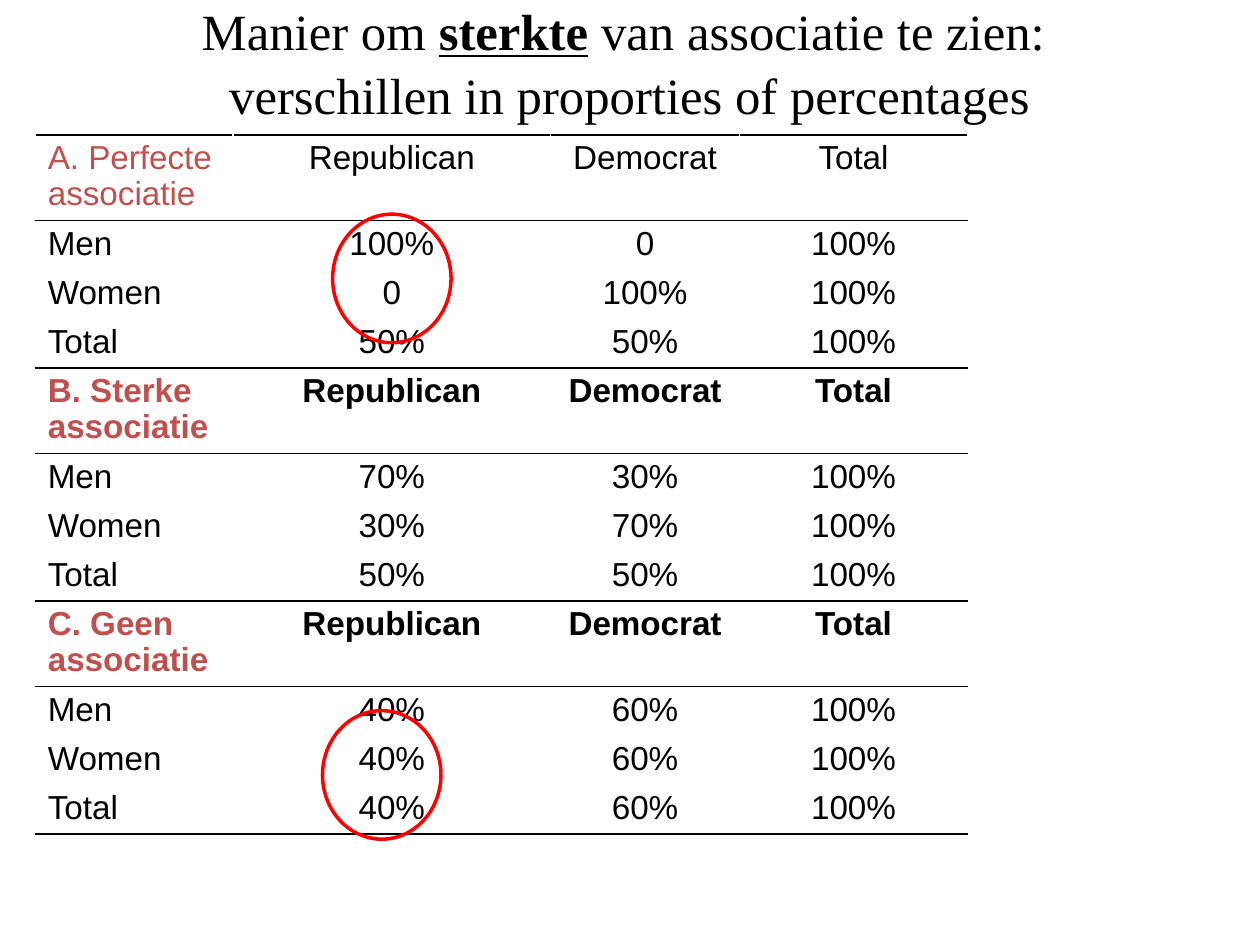
from copy import deepcopy

from lxml.etree import SubElement
from pptx import Presentation
from pptx.dml.color import RGBColor
from pptx.enum.shapes import MSO_SHAPE as Shape
from pptx.enum.text import MSO_ANCHOR as Anchor, MSO_AUTO_SIZE as AutoSize, PP_ALIGN as Align
from pptx.oxml.ns import qn
from pptx.util import Inches, Pt

COLORS = {"text": "000000", "heading": "C0504D", "white": "FFFFFF", "ring": "FF0000"}
TITLE_LINES = [
    [("Manier om ", False), ("sterkte", True), (" van associatie te zien: ", False)],
    [("verschillen in proporties of percentages", False)],
]
PARTIES = ["Republican", "Democrat", "Total"]
SECTIONS = [
    ("A. Perfecte associatie", False, [
        ("Men", "100%", "0", "100%"),
        ("Women", "0", "100%", "100%"),
        ("Total", "50%", "50%", "100%"),
    ]),
    ("B. Sterke associatie", True, [
        ("Men", "70%", "30%", "100%"),
        ("Women", "30%", "70%", "100%"),
        ("Total", "50%", "50%", "100%"),
    ]),
    ("C. Geen associatie", True, [
        ("Men", "40%", "60%", "100%"),
        ("Women", "40%", "60%", "100%"),
        ("Total", "40%", "60%", "100%"),
    ]),
]
COLUMN_WIDTHS = [1.57, 2.52, 1.5, 1.81]
HEADER_HEIGHT, ROW_HEIGHT = 0.68, 0.39
RING_SIZE = (0.94, 1.02)
RING_CORNERS = [(2.64, 1.7), (2.56, 5.64)]


def add_span(para, text, font_name, size, color, bold=False, underline=False):
    span = para.add_run()
    span.text = text
    font = span.font
    font.name, font.size = font_name, Pt(size)
    font.bold, font.underline = bold, underline
    font.color.rgb = RGBColor.from_string(COLORS[color])
    return span


def add_title(page):
    title = page.shapes.title
    title.left, title.top = Inches(0.5), Inches(-0.03)
    title.width, title.height = Inches(9), Inches(1.02)
    frame = title.text_frame
    frame.word_wrap = True
    frame.auto_size = AutoSize.NONE
    frame.vertical_anchor = Anchor.MIDDLE
    para = frame.paragraphs[0]
    para.alignment = Align.CENTER
    para.line_spacing = 1.05
    for index, line in enumerate(TITLE_LINES):
        if index:
            para.add_line_break()
            para._p.findall(qn("a:br"))[-1].append(deepcopy(span._r.rPr))
        for text, strong in line:
            span = add_span(para, text, "Times New Roman", 29, "text", strong, strong)


def set_borders(cell, top, bottom):
    props = cell._tc.get_or_add_tcPr()
    edges = {"lnL": "white", "lnR": "white", "lnT": top, "lnB": bottom}
    for tag, color in edges.items():
        line = SubElement(props, qn(f"a:{tag}"), w=str(Pt(1)))
        fill = SubElement(line, qn("a:solidFill"))
        SubElement(fill, qn("a:srgbClr"), val=COLORS[color])


def fill_cell(cell, text, column, position, bold):
    cell.margin_left = cell.margin_right = Inches(0.1)
    cell.margin_top = cell.margin_bottom = Inches(0.05)
    set_borders(cell, "text" if position in (0, 1) else "white",
                "text" if position in (0, 3) else "white")
    cell.fill.background()
    para = cell.text_frame.paragraphs[0]
    para.alignment = Align.CENTER if column else Align.LEFT
    para.line_spacing = 0.97
    color = "heading" if position == 0 and column == 0 else "text"
    add_span(para, text, "Arial", 19, color, bold)


def add_association_table(page):
    rows = []
    for heading, bold, records in SECTIONS:
        rows.append((0, bold, [heading, *PARTIES]))
        rows += [(position, False, record) for position, record in enumerate(records, 1)]
    heights = [ROW_HEIGHT if position else HEADER_HEIGHT for position, _, _ in rows]
    table = page.shapes.add_table(
        len(rows), len(COLUMN_WIDTHS), Inches(0.28), Inches(1.07),
        Inches(sum(COLUMN_WIDTHS)), Inches(sum(heights))).table
    table.first_row = table.horz_banding = False
    for column, width in enumerate(COLUMN_WIDTHS):
        table.columns[column].width = Inches(width)
    for index, (position, bold, texts) in enumerate(rows):
        table.rows[index].height = Inches(heights[index])
        for column, text in enumerate(texts):
            fill_cell(table.cell(index, column), text, column, position, bold)


def add_ring(page, left, top):
    ring = page.shapes.add_shape(
        Shape.OVAL, Inches(left), Inches(top), *map(Inches, RING_SIZE))
    ring.shadow.inherit = False
    ring.fill.background()
    ring.line.color.rgb = RGBColor.from_string(COLORS["ring"])
    ring.line.width = Pt(2)


def main():
    deck = Presentation()
    deck.slide_width, deck.slide_height = Inches(10), Inches(7.5)
    page = deck.slides.add_slide(deck.slide_layouts[5])
    add_title(page)
    add_association_table(page)
    for left, top in RING_CORNERS:
        add_ring(page, left, top)
    deck.save("out.pptx")


if __name__ == "__main__":
    main()
